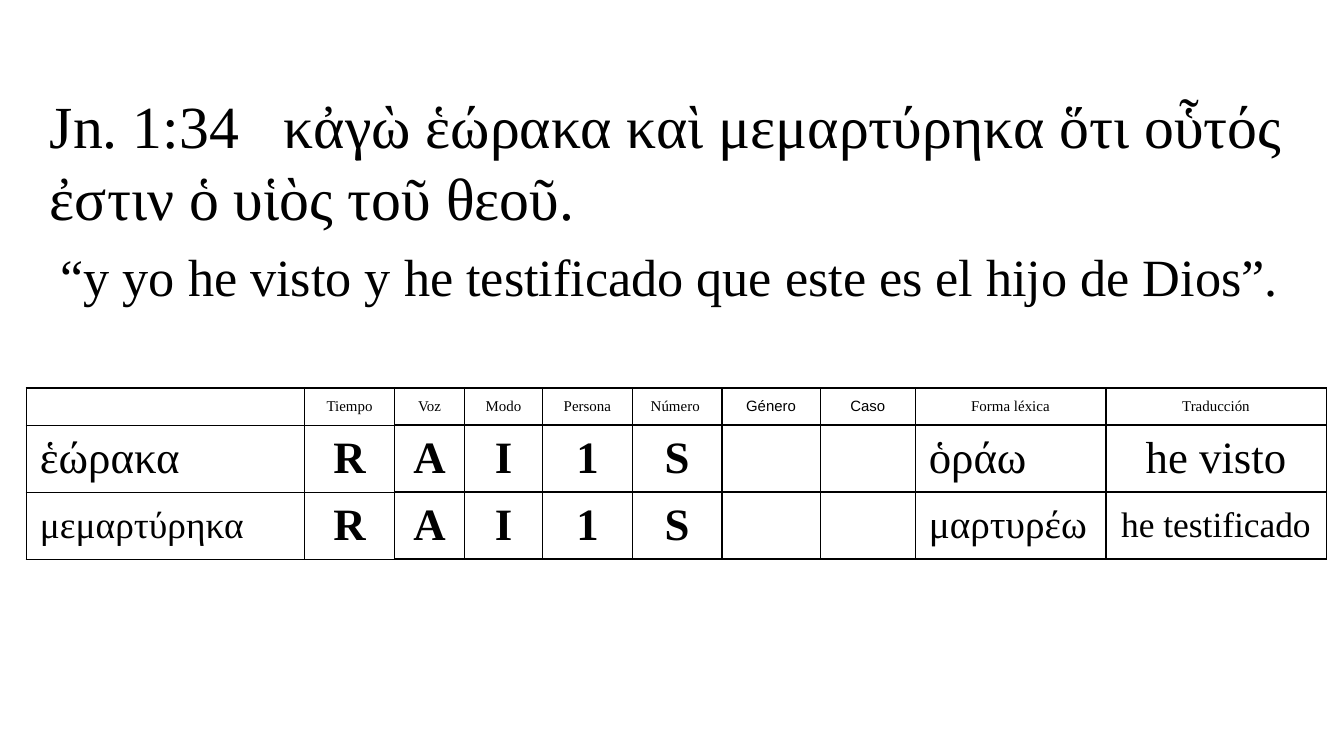
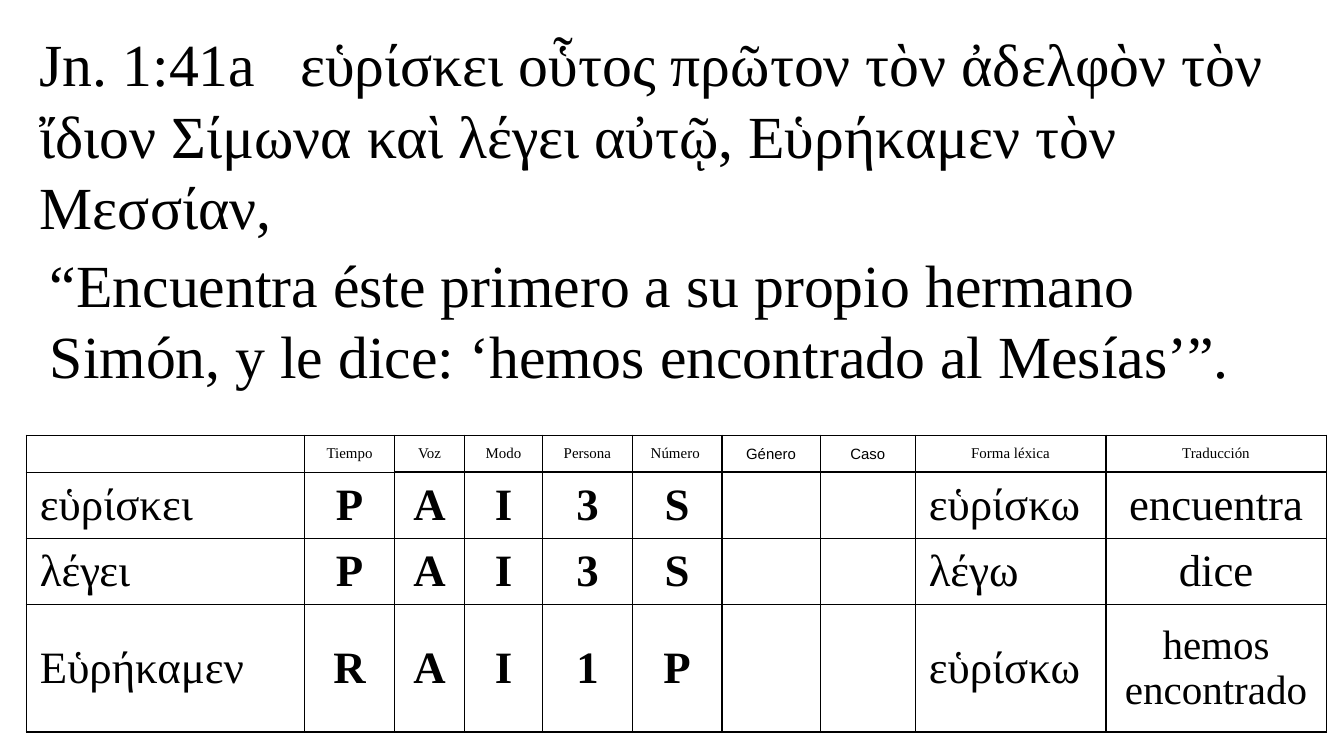
import pptx
import pptx.dml.color
import pptx.enum.text
import pptx.oxml
import pptx.oxml.ns
import pptx.util
import lxml.etree

Pt = pptx.util.Pt
ALIGN = pptx.enum.text.PP_ALIGN
ANCHOR = pptx.enum.text.MSO_ANCHOR

BLACK = pptx.dml.color.RGBColor(0x00, 0x00, 0x00)
SERIF = "Times New Roman"
SANS = "Arial"

HEADERS = ["", "Tiempo", "Voz", "Modo", "Persona", "Número ", "Género", "Caso",
           "Forma léxica", "Traducción"]
SANS_HEADERS = {"Género", "Caso"}
COLUMN_WIDTHS = [149, 48.2, 37.5, 41.8, 48.2, 47.9, 52.8, 50.9, 102, 118.2]
WORD, LEXICAL_FORM, TRANSLATION = 0, 8, 9
LEFT_COLUMNS = {WORD, LEXICAL_FORM}
THIN_RULED_COLUMNS = {0, 1}
TABLE_LEFT = 14.2
HEADER_HEIGHT = 19.8
HEADER_SIZE, PARSING_SIZE = 8, 24
CELL_FORMAT = {
    "margin_left": Pt(7.2), "margin_right": Pt(7.2),
    "margin_top": Pt(3.3), "margin_bottom": Pt(3.3),
    "vertical_anchor": ANCHOR.MIDDLE,
}


def apply_format(target, values):
    for name, value in values.items():
        setattr(target, name, value)


class Deck:
    """Holds the shared style and the slide being filled."""

    def __init__(self):
        self.presentation = pptx.Presentation()
        self.presentation.slide_width = Pt(720)
        self.presentation.slide_height = Pt(405)
        self.slide = None

    def add_slide(self):
        layout = self.presentation.slide_layouts[6]
        self.slide = self.presentation.slides.add_slide(layout)

    def add_styled_run(self, paragraph, text, size, font=SERIF, bold=False):
        run = paragraph.add_run()
        run.text = text
        apply_format(run.font, {"name": font, "size": Pt(size), "bold": bold})
        run.font.color.rgb = BLACK

    def space_before(self, paragraph, percent):
        """Set the space before as a percentage of the line height."""
        properties = paragraph._p.get_or_add_pPr()
        space = lxml.etree.SubElement(properties, pptx.oxml.ns.qn("a:spcBef"))
        lxml.etree.SubElement(space, pptx.oxml.ns.qn("a:spcPct"), val=str(percent * 1000))

    def add_text(self, text, left, top, width, height, size=32, percent_before=0):
        shape = self.slide.shapes.add_textbox(Pt(left), Pt(top), Pt(width), Pt(height))
        apply_format(shape.text_frame, {
            "word_wrap": True,
            "auto_size": pptx.enum.text.MSO_AUTO_SIZE.SHAPE_TO_FIT_TEXT,
        })
        paragraph = shape.text_frame.paragraphs[0]
        self.space_before(paragraph, percent_before)
        self.add_styled_run(paragraph, text, size)

    def rule_cell(self, cell, widths):
        """Draw the left, right, top and bottom borders, in that order."""
        properties = cell._tc.get_or_add_tcPr()
        for position, (side, width) in enumerate(zip("LRTB", widths)):
            line = pptx.oxml.parse_xml(
                f'<a:ln{side} {pptx.oxml.ns.nsdecls("a")} w="{Pt(width)}">'
                f'<a:solidFill><a:srgbClr val="{BLACK}"/></a:solidFill></a:ln{side}>')
            properties.insert(position, line)

    def fill_cell(self, cell, text, size, font, bold, centred):
        apply_format(cell, CELL_FORMAT)
        cell.fill.background()
        paragraph = cell.text_frame.paragraphs[0]
        if not text:
            lxml.etree.SubElement(paragraph._p, pptx.oxml.ns.qn("a:endParaRPr"),
                                  sz=str(size * 100))
            return
        if centred:
            paragraph.alignment = ALIGN.CENTER
        else:
            self.space_before(paragraph, 20)
        self.add_styled_run(paragraph, text, size, font, bold)

    def add_parsing_table(self, top, verbs):
        """verbs: (height, word, parsing letters, lexical form, translation, sizes)."""
        heights = [HEADER_HEIGHT] + [verb[0] for verb in verbs]
        frame = self.slide.shapes.add_table(
            len(heights), len(HEADERS), Pt(TABLE_LEFT), Pt(top),
            Pt(sum(COLUMN_WIDTHS)), Pt(sum(heights)))
        table = frame.table
        apply_format(table, {"first_row": False, "horz_banding": False})
        for column, width in zip(table.columns, COLUMN_WIDTHS):
            column.width = Pt(width)
        for row, height in zip(table.rows, heights):
            row.height = Pt(height)

        for column, text in enumerate(HEADERS):
            font = SANS if text in SANS_HEADERS else SERIF
            self.fill_cell(table.cell(0, column), text, HEADER_SIZE, font,
                           bold=False, centred=True)
        for row, (_, word, letters, form, translation, sizes) in enumerate(verbs, 1):
            texts = [word, *letters, "", "", form, translation]
            for column, text in enumerate(texts):
                self.fill_cell(table.cell(row, column), text,
                               sizes.get(column, PARSING_SIZE), SERIF,
                               bold=WORD < column < LEXICAL_FORM,
                               centred=column not in LEFT_COLUMNS)
        for row in range(len(heights)):
            for column in range(len(HEADERS)):
                inner = 0.75 if column in THIN_RULED_COLUMNS else 1
                self.rule_cell(table.cell(row, column),
                               (1, 1, inner if row else 1, inner))


def main():
    deck = Deck()

    deck.add_slide()
    deck.add_parsing_table(208, [
        (34.5, "ἑώρακα", "RAI1S", "ὁράω", "he visto", {}),
        (34, "μεμαρτύρηκα", "RAI1S", "μαρτυρέω", "he testificado",
         {WORD: 20, LEXICAL_FORM: 21, TRANSLATION: 19}),
    ])
    deck.add_text("Jn. 1:34   κἀγὼ ἑώρακα καὶ μεμαρτύρηκα ὅτι οὗτός ἐστιν ὁ υἱὸς τοῦ θεοῦ.",
                  19.6, 44, 686, 85)
    deck.add_text("“y yo he visto y he testificado que este es el hijo de Dios”.",
                  25.4, 127.5, 674.6, 41, size=28, percent_before=50)

    deck.add_slide()
    deck.add_parsing_table(233.2, [
        (34, "εὑρίσκει", "PAI3S", "εὑρίσκω", "encuentra", {}),
        (34, "λέγει", "PAI3S", "λέγω", "dice", {}),
        (68.4, "Εὑρήκαμεν", "RAI1P", "εὑρίσκω", "hemos encontrado", {TRANSLATION: 22}),
    ])
    deck.add_text("Jn. 1:41a   εὑρίσκει οὗτος πρῶτον τὸν ἀδελφὸν τὸν ἴδιον Σίμωνα καὶ λέγει "
                  "αὐτῷ, Εὑρήκαμεν τὸν Μεσσίαν,", 14.2, 10.8, 692, 124)
    deck.add_text("“Encuentra éste primero a su propio hermano Simón, y le dice: "
                  "‘hemos encontrado al Mesías’”.",
                  19.6, 129, 680.4, 85, percent_before=50)

    deck.presentation.save("out.pptx")


if __name__ == "__main__":
    main()
